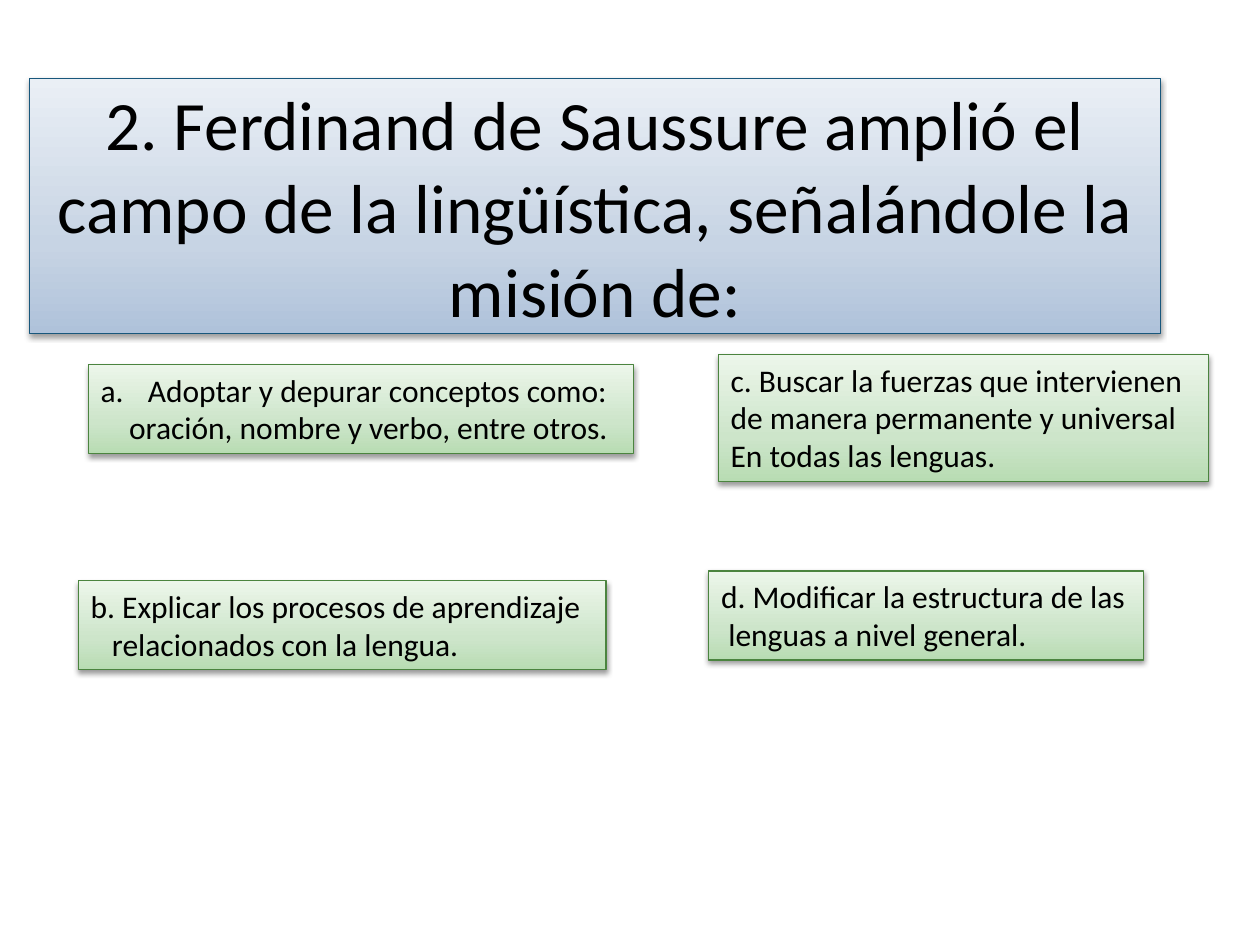
from copy import deepcopy

from lxml import etree
from pptx import Presentation
from pptx import util as u
from pptx.dml.color import RGBColor
from pptx.enum import shapes, text
from pptx.oxml import ns

BLACK = RGBColor(0x00, 0x00, 0x00)
BLUE_LINE = RGBColor(0x18, 0x57, 0x7C)
GREEN_LINE = RGBColor(0x4B, 0x84, 0x3F)
BLUES = (RGBColor(0xAF, 0xC2, 0xDA), RGBColor(0xC7, 0xD4, 0xE4), RGBColor(0xEA, 0xEF, 0xF5))
GREENS = (RGBColor(0xB8, 0xDC, 0xB3), RGBColor(0xCD, 0xE5, 0xCA), RGBColor(0xEC, 0xF6, 0xEA))
STOPS = (0, 0.35, 1)
JUSTIFY = text.PP_ALIGN.JUSTIFY
LEFT = text.PP_ALIGN.LEFT


class Quiz:
    font = "Calibri"

    def __init__(self):
        self.deck = Presentation()
        self.deck.slide_width, self.deck.slide_height = u.Pt(720), u.Pt(540)
        self.slide = self.deck.slides.add_slide(self.deck.slide_layouts[6])

    def panel(self, box, colours, outline):
        panel = self.slide.shapes.add_shape(
            shapes.MSO_SHAPE.RECTANGLE, *(u.Pt(length) for length in box))
        panel.line.color.rgb = outline
        panel.line.width = u.Pt(0.75)
        self.shade(panel, colours)
        self.shadow(panel)
        panel.text_frame.word_wrap = True
        return panel

    def shade(self, panel, colours):
        panel.fill.gradient()
        panel.fill.gradient_angle = 90
        first = next(panel._element.spPr.iter(ns.qn("a:gs")))
        first.addnext(deepcopy(first))
        for stop, colour, position in zip(panel.fill.gradient_stops, colours, STOPS):
            stop.color.rgb = colour
            stop.position = position

    def shadow(self, panel):
        panel.shadow.inherit = False
        effects = panel._element.spPr.find(ns.qn("a:effectLst"))
        outer = etree.SubElement(
            effects, ns.qn("a:outerShdw"), blurRad=str(u.Pt(3.1)),
            dist=str(u.Pt(1.6)), dir="5400000", rotWithShape="0")
        black = etree.SubElement(outer, ns.qn("a:srgbClr"), val="000000")
        etree.SubElement(black, ns.qn("a:alpha"), val="38000")

    def style(self, paragraph, size, alignment):
        paragraph.alignment = alignment
        for run in paragraph.runs:
            run.font.name = self.font
            run.font.size = u.Pt(size)
            run.font.color.rgb = BLACK

    def question(self, box, wording):
        frame = self.panel(box, BLUES, BLUE_LINE).text_frame
        frame.vertical_anchor = text.MSO_ANCHOR.MIDDLE
        frame.text = wording
        self.style(frame.paragraphs[0], 39.6, text.PP_ALIGN.CENTER)

    def answer(self, box, lines, margin=0, alignment=JUSTIFY, lettered=False):
        frame = self.panel(box, GREENS, GREEN_LINE).text_frame
        frame.vertical_anchor = text.MSO_ANCHOR.TOP
        frame.auto_size = text.MSO_AUTO_SIZE.SHAPE_TO_FIT_TEXT
        frame.text = "\n".join(lines)
        for paragraph in frame.paragraphs:
            self.style(paragraph, 18, alignment)
        for paragraph in frame.paragraphs[1:]:
            paragraph._p.get_or_add_pPr().set("marL", str(u.Pt(margin)))
        if lettered:
            self.letter(frame.paragraphs[0])

    def letter(self, paragraph):
        properties = paragraph._p.get_or_add_pPr()
        properties.set("marL", str(u.Pt(27)))
        properties.set("indent", str(u.Pt(-27)))
        etree.SubElement(properties, ns.qn("a:buFont"), typeface=self.font)
        etree.SubElement(properties, ns.qn("a:buAutoNum"), type="alphaLcPeriod")


def main():
    quiz = Quiz()
    quiz.question(
        (16.7, 44.8, 646.6, 146),
        "2. Ferdinand de Saussure amplió el campo de la lingüística, señalándole la misión de:")
    quiz.answer(
        (50.4, 208.2, 311.8, 51),
        ("Adoptar y depurar conceptos como:", "oración, nombre y verbo, entre otros."),
        margin=16.3, lettered=True)
    quiz.answer(
        (44.7, 331.8, 301.7, 51),
        ("b. Explicar los procesos de aprendizaje", "relacionados con la lengua."),
        margin=12.2)
    quiz.answer(
        (410.4, 202.5, 280.1, 72.7),
        ("c. Buscar la fuerzas que intervienen", "de manera permanente y universal",
         "En todas las lenguas."))
    quiz.answer(
        (405, 326.2, 248.4, 51),
        ("d. Modificar la estructura de las", "lenguas a nivel general."),
        margin=4.1, alignment=LEFT)
    quiz.deck.save("out.pptx")


if __name__ == "__main__":
    main()
